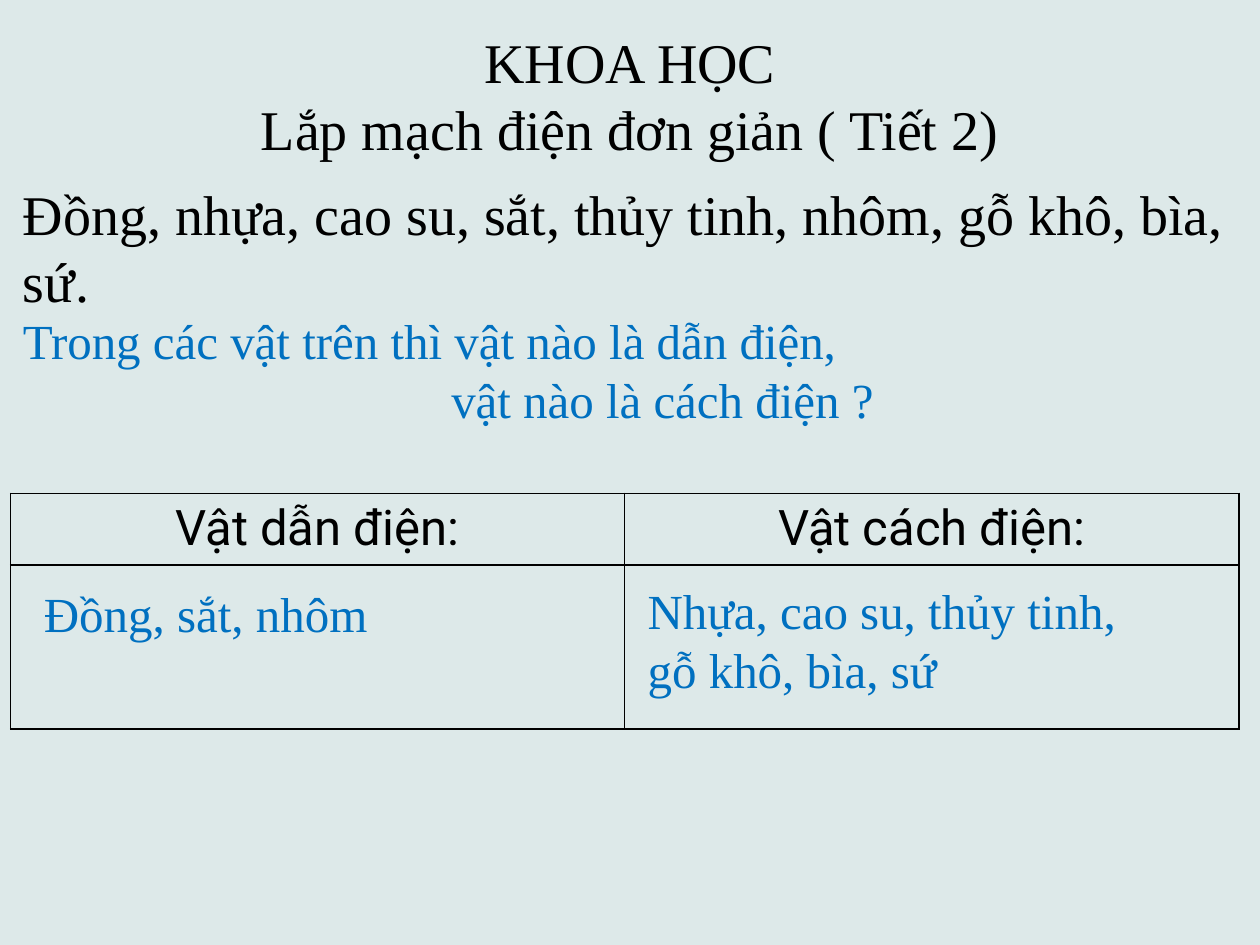
from lxml import etree
from pptx import Presentation
from pptx import util as u
from pptx.dml.color import RGBColor
from pptx.enum import text
from pptx.oxml.ns import qn

BACKDROP = RGBColor(0xDD, 0xE9, 0xE9)
BLACK = RGBColor(0x00, 0x00, 0x00)
BLUE = RGBColor(0x00, 0x70, 0xC0)
SERIF, SANS = "Times New Roman", "Roboto"

deck = Presentation()
deck.slide_width, deck.slide_height = u.Inches(10), u.Inches(7.5)
# Grid of 120 columns by 90 rows
COL, ROW = deck.slide_width / 120, deck.slide_height / 90

slide = deck.slides.add_slide(deck.slide_layouts[6])
slide.background.fill.solid()
slide.background.fill.fore_color.rgb = BACKDROP


def write(frame, wording, size, font, color, align=text.PP_ALIGN.LEFT):
    frame.text = wording
    for paragraph in frame.paragraphs:
        paragraph.alignment = align
        for run in paragraph.runs:
            run.font.size, run.font.name = u.Pt(size), font
            run.font.color.rgb = color


def add_text(col, row, cols, rows, *style):
    box = slide.shapes.add_textbox(int(col * COL), int(row * ROW),
                                   int(cols * COL), int(rows * ROW))
    box.text_frame.word_wrap = True
    write(box.text_frame, *style)
    return box.text_frame


# Materials, question and lesson title
add_text(1, 16.5, 117, 14, "Đồng, nhựa, cao su, sắt, thủy tinh, nhôm, gỗ khô, bìa, sứ.",
         32, SERIF, BLACK)
question = add_text(1, 29, 119, 12.4,
                    "Trong các vật trên thì vật nào là dẫn điện,\nvật nào là cách điện ?",
                    28, SERIF, BLUE)
question.paragraphs[1]._p.get_or_add_pPr().set("marL", str(int(40.8 * COL)))
add_text(11, 2, 98, 14.2, "KHOA HỌC\nLắp mạch điện đơn giản ( Tiết 2)",
         32, SERIF, BLACK, text.PP_ALIGN.CENTER)

# Table of conductors and insulators
HEADINGS = ["Vật dẫn điện:", "Vật cách điện:"]
row_heights = [6.8, 15.6]
sorting = slide.shapes.add_table(2, 2, int(COL), int(47 * ROW), int(117 * COL),
                                 int(sum(row_heights) * ROW)).table
sorting.first_row = sorting.horz_banding = False
for table_row, height in zip(sorting.rows, row_heights):
    table_row.height = int(height * ROW)
for cell, heading in zip(sorting.rows[0].cells, HEADINGS):
    write(cell.text_frame, heading, 28, SANS, BLACK, text.PP_ALIGN.CENTER)
for cell in sorting.iter_cells():
    cell.fill.background()
    for position, side in enumerate(("lnL", "lnR", "lnT", "lnB")):
        border = etree.Element(qn("a:" + side), w=str(u.Pt(1)))
        paint = etree.SubElement(border, qn("a:solidFill"))
        etree.SubElement(paint, qn("a:srgbClr"), val=str(BLACK))
        # Borders come before the fill in the cell properties
        cell._tc.get_or_add_tcPr().insert(position, border)

# Answers
add_text(3, 55, 38, 6.8, "Đồng, sắt, nhôm", 28, SERIF, BLUE)
add_text(60.5, 54.7, 52, 12.5, "Nhựa, cao su, thủy tinh, gỗ khô, bìa, sứ", 28, SERIF, BLUE)

deck.save("out.pptx")
